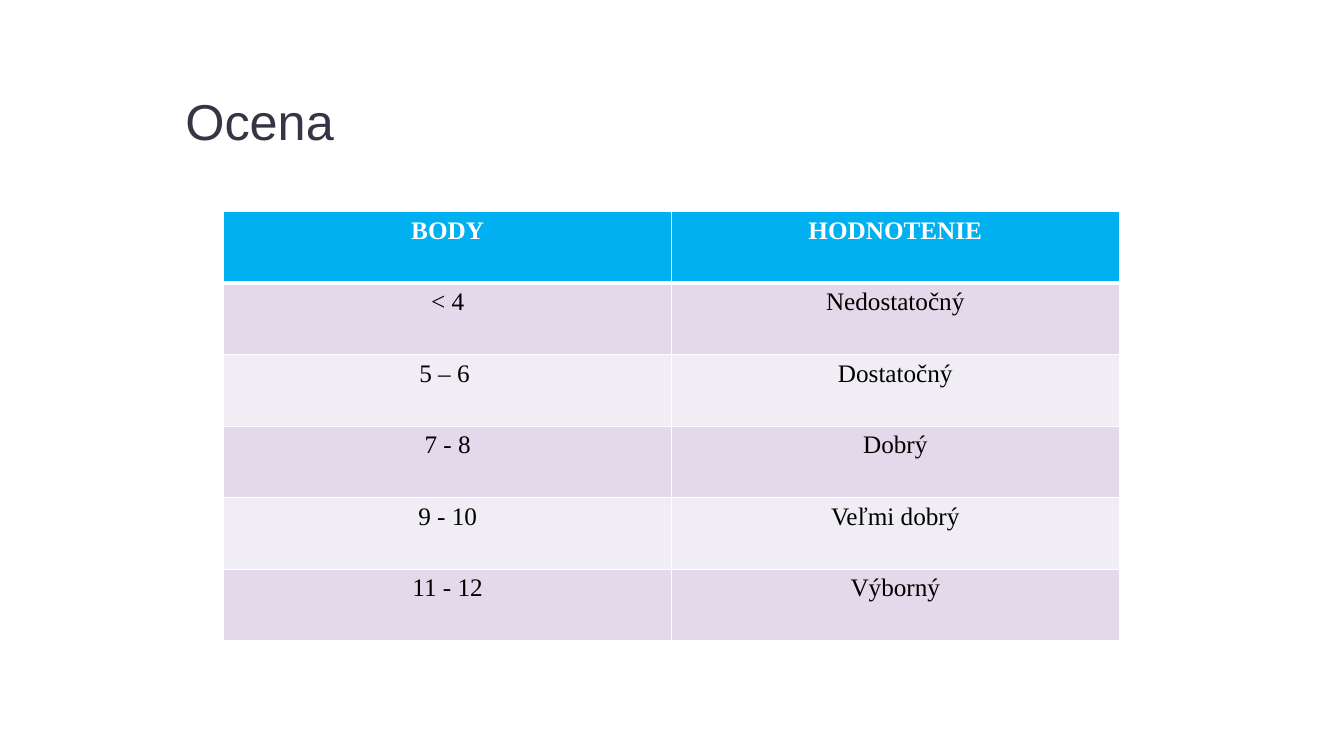
from dataclasses import dataclass
from typing import Any

from lxml import etree
from pptx import Presentation, util as u
from pptx.dml.color import RGBColor
from pptx.enum import text as t
from pptx.oxml.ns import qn


@dataclass(frozen=True)
class Theme:
    ink: str = "373545"
    head: str = "00B0F0"
    bands: tuple[str, str] = ("E3D9EA", "F1EDF5")
    white: str = "FFFFFF"
    black: str = "000000"
    sans: str = "Arial"
    serif: str = "Times New Roman"
    title: int = 36
    body: int = 18


@dataclass(frozen=True)
class Grade:
    points: str
    mark: str


THEME = Theme()
GRADES = [
    Grade("BODY", "HODNOTENIE"),
    Grade("< 4", "Nedostatočný"),
    Grade("5 – 6 ", "Dostatočný"),
    Grade("7 - 8", "Dobrý"),
    Grade("9 - 10", "Veľmi dobrý"),
    Grade("11 - 12", "Výborný"),
]
COL, ROW = 4.44, 0.71


def write(frame: Any, words: str, *, font: str, size: int, color: str,
          bold: bool = False, align: Any = t.PP_ALIGN.LEFT,
          space: float = 1.0) -> None:
    par = frame.paragraphs[0]
    par.alignment = align
    par.line_spacing = space
    run = par.add_run()
    run.text = words
    run.font.name = font
    run.font.size = u.Pt(size)
    run.font.bold = bold
    run.font.color.rgb = RGBColor.from_string(color)


def edge(cell: Any, side: str, width: float, color: str) -> None:
    props = cell._tc.get_or_add_tcPr()
    line = etree.SubElement(props, qn(f"a:ln{side}"), w=str(u.Pt(width)))
    fill = etree.SubElement(line, qn("a:solidFill"))
    etree.SubElement(fill, qn("a:srgbClr"), val=color)


def draw_cell(cell: Any, words: str, row: int) -> None:
    head = row == 0
    # Borders come before the fill; the rule under the header is thicker
    for side in "LRTB":
        thick = (head and side == "B") or (row == 1 and side == "T")
        edge(cell, side, 3 if thick else 1, THEME.white)
    cell.fill.solid()
    shade = THEME.head if head else THEME.bands[(row - 1) % 2]
    cell.fill.fore_color.rgb = RGBColor.from_string(shade)
    write(cell.text_frame, words, font=THEME.serif, size=THEME.body,
          color=THEME.white if head else THEME.black, bold=head,
          align=t.PP_ALIGN.CENTER)


def draw_title(slide: Any, words: str) -> None:
    box = slide.shapes.add_textbox(u.Inches(1.74), u.Inches(0.19),
                                   u.Inches(10.7), u.Inches(1.36))
    frame = box.text_frame
    frame.word_wrap = True
    frame.vertical_anchor = t.MSO_ANCHOR.BOTTOM
    write(frame, words, font=THEME.sans, size=THEME.title,
          color=THEME.ink, space=0.9)


def draw_table(slide: Any, grades: list[Grade]) -> None:
    table = slide.shapes.add_table(
        len(grades), 2, u.Inches(2.22), u.Inches(2.1),
        u.Inches(2 * COL), u.Inches(len(grades) * ROW)).table
    for row, grade in enumerate(grades):
        for col, words in enumerate((grade.points, grade.mark)):
            draw_cell(table.cell(row, col), words, row)


def main() -> None:
    deck = Presentation()
    deck.slide_width, deck.slide_height = u.Inches(13.33), u.Inches(7.5)
    slide = deck.slides.add_slide(deck.slide_layouts[6])
    draw_title(slide, "Ocena")
    draw_table(slide, GRADES)
    deck.save("out.pptx")


if __name__ == "__main__":
    main()
